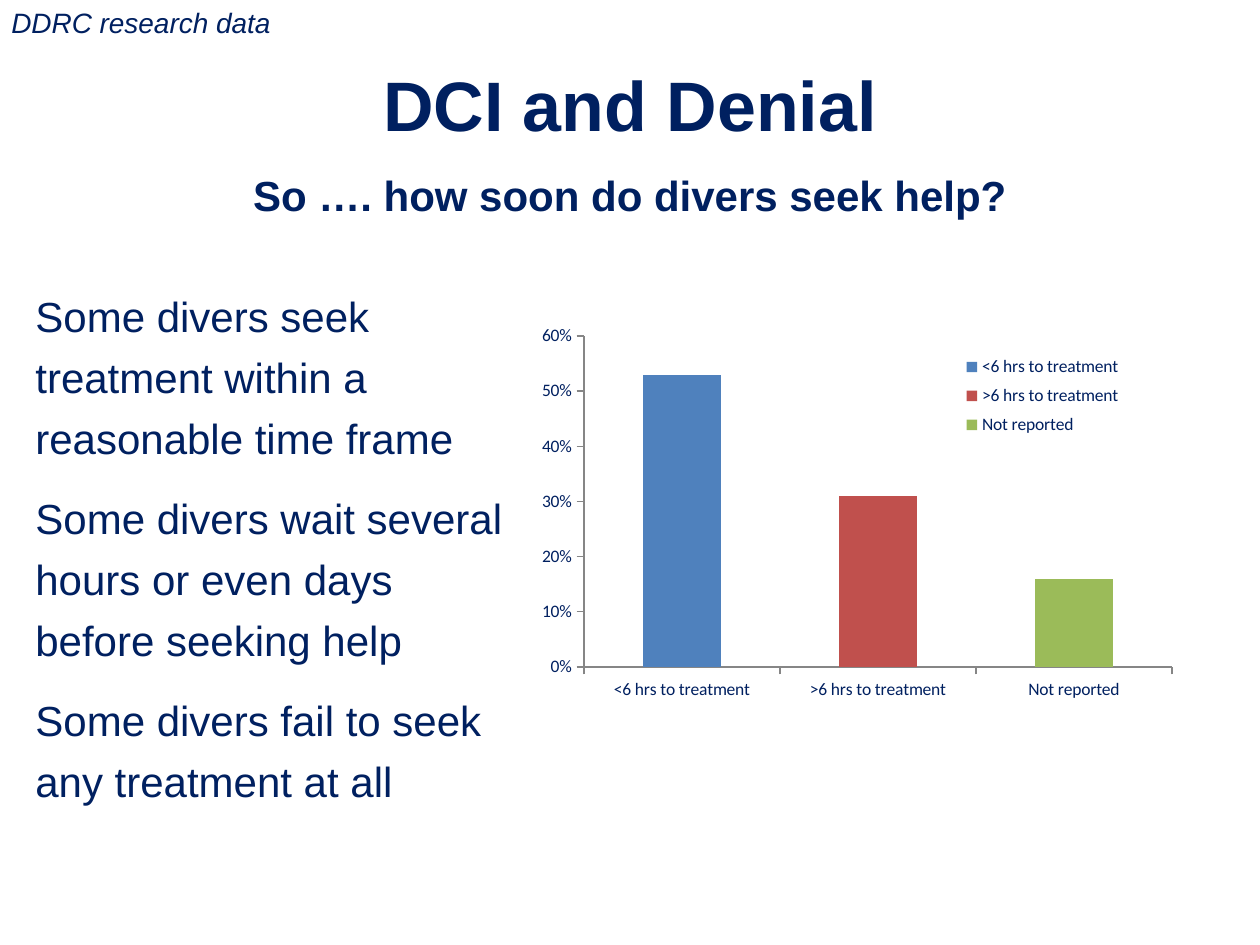
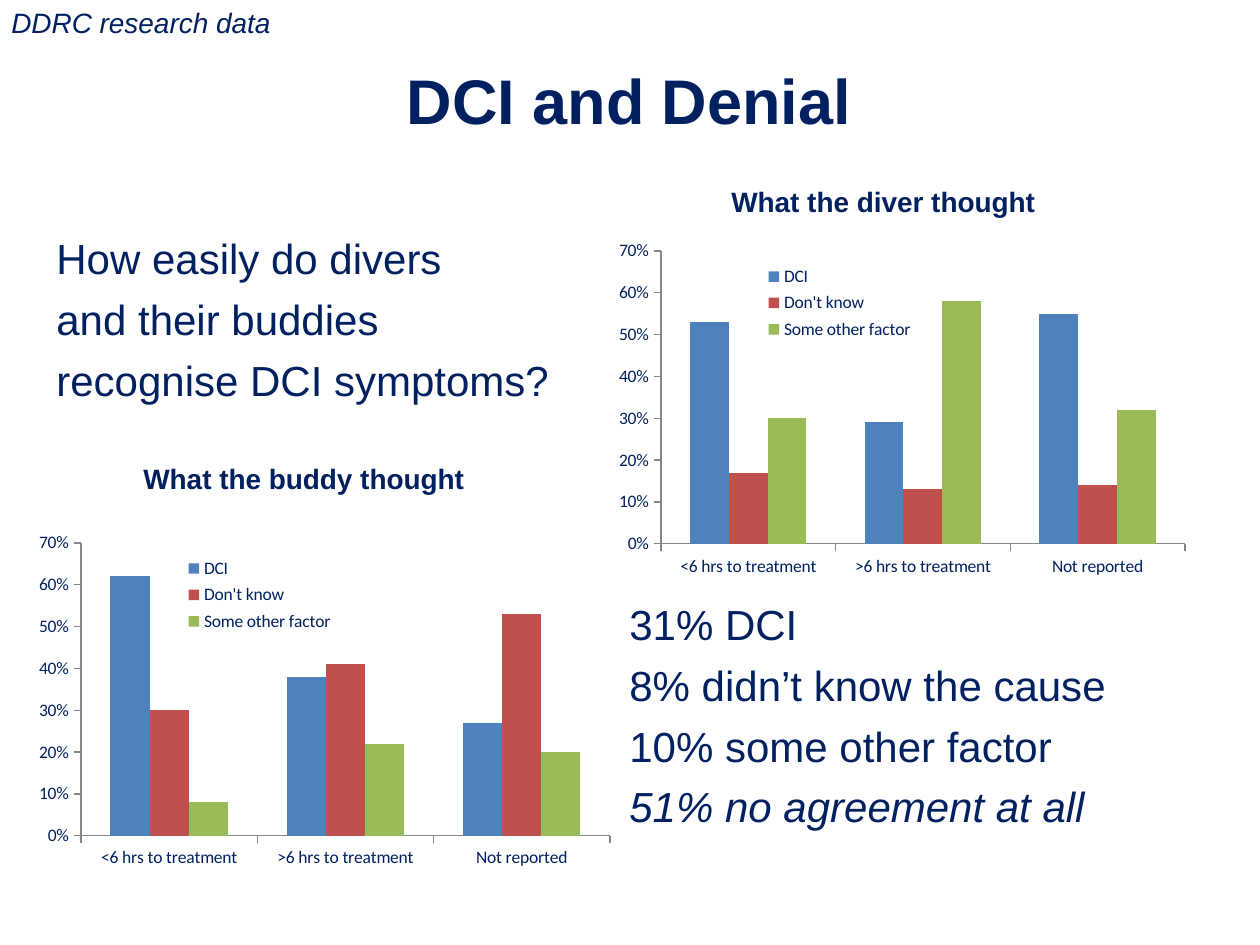
from lxml import etree
from pptx import Presentation
from pptx.chart.data import CategoryChartData
from pptx.dml.color import RGBColor
from pptx.enum.chart import XL_CHART_TYPE as ChartType, XL_LEGEND_POSITION as LegendPos, XL_TICK_MARK as Tick
from pptx.enum.text import MSO_ANCHOR as Anchor, MSO_AUTO_SIZE as AutoSize, PP_ALIGN as Align
from pptx.oxml.ns import qn
from pptx.util import Emu, Pt

PX = 914400 / 126
NAVY = RGBColor(0x00, 0x20, 0x60)
GREY = RGBColor(0x86, 0x86, 0x86)
BLUE = RGBColor(0x4F, 0x81, 0xBD)
RED = RGBColor(0xC0, 0x50, 0x4D)
GREEN = RGBColor(0x9B, 0xBB, 0x59)
BAR_COLOURS = (BLUE, RED, GREEN)

TITLE = "DCI and Denial"
DELAYS = ("<6 hrs to treatment", ">6 hrs to treatment", "Not reported")
CAUSES = ("DCI", "Don't know", "Some other factor")
LINE_GAP = 6
GROUP_GAP = 17

BODY = {"size": 24}
HEADING = {"size": 16, "bold": True}
SOURCE = {"size": 16, "italic": True}


def px(length):
    return Emu(round(length * PX))


def place(shape, box):
    for side, length in zip(("left", "top", "width", "height"), box):
        setattr(shape, side, px(length))


def style_font(font, size, name="Arial", **format_values):
    font.name = name
    font.size = Pt(size)
    font.color.rgb = NAVY
    for key, value in format_values.items():
        setattr(font, key, value)


def write_lines(frame, lines, align=Align.LEFT):
    for index, (text, gap, look) in enumerate(lines):
        para = frame.add_paragraph() if index else frame.paragraphs[0]
        para.alignment = align
        para.space_before = Pt(gap if index else 0)
        span = para.add_run()
        span.text = text
        style_font(span.font, **look)


def add_text(page, box, lines, wrap=True):
    shape = page.shapes.add_textbox(*map(px, box))
    shape.text_frame.word_wrap = wrap
    write_lines(shape.text_frame, lines)


def body_lines(*texts):
    return [(text, LINE_GAP, BODY) for text in texts]


def add_page(deck, title_box, title_lines):
    page = deck.slides.add_slide(deck.slide_layouts[5])
    title = page.shapes.title
    place(title, title_box)
    title.text_frame.auto_size = AutoSize.NONE
    title.text_frame.vertical_anchor = Anchor.TOP
    write_lines(title.text_frame, title_lines, Align.CENTER)
    add_text(page, (-1, -1, 287, 47), [("DDRC research data", 0, SOURCE)], wrap=False)
    return page


def set_layout(parent, position, box, chart_box, inner=False):
    for old in parent.findall(qn("c:layout")):
        parent.remove(old)
    layout = etree.Element(qn("c:layout"))
    parent.insert(position, layout)
    manual = etree.SubElement(layout, qn("c:manualLayout"))
    settings = [("layoutTarget", "inner")] if inner else []
    settings += [("xMode", "edge"), ("yMode", "edge")]
    sizes = chart_box[2:] * 2
    settings += [(key, f"{part / whole:.4f}") for key, part, whole in zip("xywh", box, sizes)]
    for key, value in settings:
        etree.SubElement(manual, qn(f"c:{key}")).set("val", value)


def paint(part, colour):
    part.format.fill.solid()
    part.format.fill.fore_color.rgb = colour


def add_bar_chart(page, box, plot_box, legend_box, peak, series_values):
    data = CategoryChartData(number_format="0%")
    data.categories = DELAYS
    for name, values in series_values.items():
        data.add_series(name, values)
    frame = page.shapes.add_chart(ChartType.COLUMN_CLUSTERED, *map(px, box), data)
    chart = frame.chart
    chart.has_title = False
    style_font(chart.font, 10, "Calibri")

    chart.has_legend = True
    chart.legend.position = LegendPos.RIGHT
    chart.legend.include_in_layout = False
    style_font(chart.legend.font, 10, "Calibri")

    for axis in (chart.category_axis, chart.value_axis):
        axis.has_major_gridlines = False
        axis.major_tick_mark = Tick.OUTSIDE
        axis.minor_tick_mark = Tick.NONE
        axis.format.line.color.rgb = GREY
        style_font(axis.tick_labels.font, 10, "Calibri")
    chart.value_axis.minimum_scale = 0
    chart.value_axis.maximum_scale = peak
    chart.value_axis.major_unit = 0.1
    chart.value_axis.tick_labels.number_format = "0%"
    chart.value_axis.tick_labels.number_format_is_linked = False

    plot = chart.plots[0]
    plot.gap_width = 150
    plot.overlap = 0
    plot.vary_by_categories = len(series_values) == 1
    if plot.vary_by_categories:
        bars = [plot.series[0].points[index] for index in range(len(DELAYS))]
    else:
        bars = plot.series
    for bar, colour in zip(bars, BAR_COLOURS):
        paint(bar, colour)

    area = chart.element.find(".//" + qn("c:plotArea"))
    legend = chart.element.find(".//" + qn("c:legend"))
    set_layout(area, 0, plot_box, box, inner=True)
    set_layout(legend, 1, legend_box, box)


def add_opinion_chart(page, left, top, plot_width, values):
    add_bar_chart(page, (left, top, 630, 378), (80, 19, plot_width, 293),
                  (176, 28, 165, 86), 0.7, dict(zip(CAUSES, values)))


def add_delay_page(deck):
    page = add_page(deck, (64, 55, 1132, 174), [
        (TITLE, 0, {"size": 40, "bold": True}),
        ("So …. how soon do divers seek help?", 14, {"size": 24, "bold": True}),
    ])
    groups = (
        ("Some divers seek", "treatment within a", "reasonable time frame"),
        ("Some divers wait several", "hours or even days", "before seeking help"),
        ("Some divers fail to seek", "any treatment at all"),
    )
    lines = [(text, LINE_GAP if index else GROUP_GAP, BODY)
             for group in groups for index, text in enumerate(group)]
    add_text(page, (23, 284, 496, 546), lines)
    add_bar_chart(page, (519, 314, 707, 427), (65, 22, 588, 331),
                  (441, 34, 165, 96), 0.6, {"Series 1": (0.53, 0.31, 0.16)})


def add_opinion_page(deck):
    page = add_page(deck, (292, 55, 674, 89), [(TITLE, 0, {"size": 36, "bold": True})])
    add_text(page, (719, 178, 338, 59), [("What the diver thought", 0, HEADING)])
    add_text(page, (44, 226, 546, 192), body_lines(
        "How easily do divers", "and their buddies", "recognise DCI symptoms?"))
    add_opinion_chart(page, 1, 524, 529, (
        (0.62, 0.38, 0.27), (0.3, 0.41, 0.53), (0.08, 0.22, 0.2)))
    add_text(page, (131, 455, 363, 59), [("What the buddy thought", 0, HEADING)])
    add_opinion_chart(page, 581, 232, 524, (
        (0.53, 0.29, 0.55), (0.17, 0.13, 0.14), (0.3, 0.58, 0.32)))
    results = body_lines("31% DCI", "8% didn’t know the cause", "10% some other factor")
    results.append(("51% no agreement at all", LINE_GAP, {**BODY, "italic": True}))
    add_text(page, (617, 592, 551, 242), results)


def main():
    deck = Presentation()
    deck.slide_width = px(1260)
    deck.slide_height = px(945)
    add_delay_page(deck)
    add_opinion_page(deck)
    deck.save("out.pptx")


if __name__ == "__main__":
    main()
